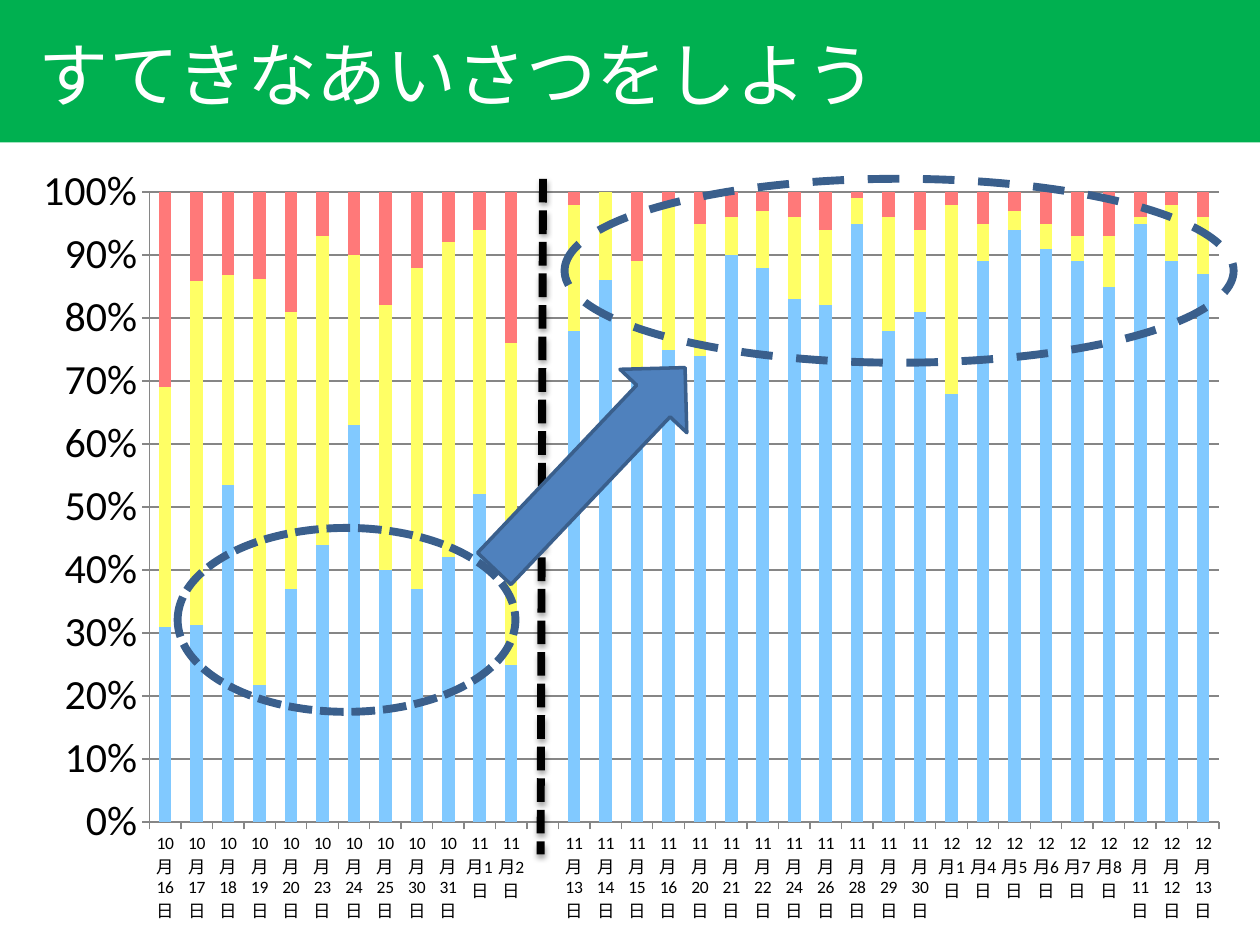
from dataclasses import dataclass
from typing import Optional

from lxml import etree
from pptx import Presentation
from pptx.chart.data import CategoryChartData
from pptx.dml.color import RGBColor
from pptx.enum import chart as ch, dml, shapes, text
from pptx.oxml import parse_xml
from pptx.oxml.ns import nsdecls, qn
from pptx.util import Pt


@dataclass(frozen=True)
class Theme:
    font: str = "Calibri"
    title_size: float = 40
    value_size: float = 24
    date_size: float = 10
    banner: str = "00B050"
    white: str = "FFFFFF"
    black: str = "000000"
    grid: str = "868686"
    outline: str = "3A5F8C"
    arrow: str = "4F81BD"


@dataclass(frozen=True)
class Mark:
    kind: shapes.MSO_SHAPE
    box: tuple[float, float, float, float]
    line_width: float = 0
    dash: Optional[dml.MSO_LINE] = None
    fill: Optional[str] = None
    rotation: float = 0


@dataclass(frozen=True)
class Level:
    name: str
    color: str
    before: list[int]
    after: list[int]


THEME = Theme()
BANNER = Mark(shapes.MSO_SHAPE.RECTANGLE, (0, 0, 720, 81.4), fill=THEME.banner)
TITLE = Mark(shapes.MSO_SHAPE.RECTANGLE, (15.1, 14.4, 689, 55.4), fill=THEME.banner)
MARKS = [
    Mark(shapes.MSO_SHAPE.OVAL, (101.5, 301.7, 193, 105.1), 4.5, dml.MSO_LINE.SQUARE_DOT),
    Mark(shapes.MSO_SHAPE.OVAL, (322.6, 102.2, 382.3, 105.1), 4.5, dml.MSO_LINE.DASH),
    Mark(shapes.MSO_SHAPE.RIGHT_ARROW, (257.8, 241.2, 158.4, 52.6), 2,
         fill=THEME.arrow, rotation=313.5),
]

# Days surveyed before and after the campaign, by month
BEFORE = {10: [16, 17, 18, 19, 20, 23, 24, 25, 30, 31], 11: [1, 2]}
AFTER = {11: [13, 14, 15, 16, 20, 21, 22, 24, 26, 28, 29, 30],
         12: [1, 4, 5, 6, 7, 8, 11, 12, 13]}
LEVELS = [
    Level("Series 1", "81C9FF",
          [31, 31, 53, 22, 37, 44, 63, 40, 37, 42, 52, 25],
          [78, 86, 72, 75, 74, 90, 88, 83, 82, 95, 78, 81, 68, 89, 94, 91, 89, 85, 95, 89, 87]),
    Level("Series 2", "FFFF65",
          [38, 54, 33, 65, 44, 49, 27, 42, 51, 50, 42, 51],
          [20, 14, 17, 23, 21, 6, 9, 13, 12, 4, 18, 13, 30, 6, 3, 4, 4, 8, 1, 9, 9]),
    Level("Series 3", "FF7979",
          [31, 14, 13, 14, 19, 7, 10, 18, 12, 8, 6, 24],
          [2, 0, 11, 2, 5, 4, 3, 4, 6, 1, 4, 6, 2, 5, 3, 5, 7, 7, 4, 2, 4]),
]


def rgb(value: str) -> RGBColor:
    return RGBColor.from_string(value)


def set_fill(fill, color: str) -> None:
    fill.solid()
    fill.fore_color.rgb = rgb(color)


def set_line(line, color: str, width: float, dash=None) -> None:
    set_fill(line.fill, color)
    line.width = Pt(width)
    if dash:
        line.dash_style = dash


def add_mark(parent, mark: Mark):
    sp = parent.add_shape(mark.kind, *map(Pt, mark.box))
    sp.shadow.inherit = False
    sp.rotation = mark.rotation
    if mark.fill:
        set_fill(sp.fill, mark.fill)
    else:
        sp.fill.background()
    if mark.line_width:
        set_line(sp.line, THEME.outline, mark.line_width, mark.dash)
    else:
        sp.line.fill.background()
    return sp


def add_header(s) -> None:
    group = s.shapes.add_group_shape()
    add_mark(group.shapes, BANNER)
    tf = add_mark(group.shapes, TITLE).text_frame
    tf.word_wrap = True
    tf.auto_size = text.MSO_AUTO_SIZE.SHAPE_TO_FIT_TEXT
    tf.vertical_anchor = text.MSO_ANCHOR.TOP
    p = tf.paragraphs[0]
    p.text = "すてきなあいさつをしよう"
    p.alignment = text.PP_ALIGN.LEFT
    p.font.name, p.font.size = THEME.font, Pt(THEME.title_size)
    p.font.color.rgb = rgb(THEME.white)


def date_labels(days: dict[int, list[int]]) -> list[str]:
    return [f"{month}月{day}日" for month, dates in days.items() for day in dates]


def set_plot_area(chart, x: float, y: float, w: float, h: float) -> None:
    area = chart._chartSpace.chart.plotArea
    for old in area.findall(qn("c:layout")):
        area.remove(old)
    settings = [("layoutTarget", "inner"), ("xMode", "edge"), ("yMode", "edge"),
                ("x", x), ("y", y), ("w", w), ("h", h)]
    body = "".join(f'<c:{tag} val="{val}"/>' for tag, val in settings)
    area.insert(0, parse_xml(f'<c:layout {nsdecls("c")}><c:manualLayout>{body}'
                             '</c:manualLayout></c:layout>'))


def add_greeting_chart(s) -> None:
    data = CategoryChartData(number_format="0")
    data.categories = date_labels(BEFORE) + [""] + date_labels(AFTER)
    for level in LEVELS:
        data.add_series(level.name, level.before + [None] + level.after)
    chart = s.shapes.add_chart(ch.XL_CHART_TYPE.COLUMN_STACKED_100, Pt(7.9), Pt(92.2),
                               Pt(704.9), Pt(434.9), data).chart
    chart.has_legend = chart.has_title = False
    chart.font.name, chart.font.size = THEME.font, Pt(THEME.date_size)
    chart.font.color.rgb = rgb(THEME.black)
    set_plot_area(chart, 0.11, 0.041, 0.867, 0.839)

    plot = chart.plots[0]
    plot.gap_width, plot.overlap, plot.vary_by_categories = 150, 100, False
    for series, level in zip(plot.series, LEVELS):
        set_fill(series.format.fill, level.color)

    # Axes
    dates, shares = chart.category_axis, chart.value_axis
    for axis, size in ((dates, THEME.date_size), (shares, THEME.value_size)):
        axis.major_tick_mark = ch.XL_TICK_MARK.OUTSIDE
        axis.tick_labels.font.size = Pt(size)
        set_line(axis.format.line, THEME.grid, 0.75)
    dates._element.find(qn("c:txPr")).find(qn("a:bodyPr")).set("rot", "0")
    shares.minimum_scale, shares.maximum_scale, shares.major_unit = 0, 1, 0.1
    shares.tick_labels.number_format = "0%"
    shares.tick_labels.number_format_is_linked = False
    shares.has_major_gridlines = True
    set_line(shares.major_gridlines.format.line, THEME.grid, 0.75)


def add_divider(s) -> None:
    line = s.shapes.add_connector(shapes.MSO_CONNECTOR.STRAIGHT,
                                  Pt(310.3), Pt(102.2), Pt(308.9), Pt(488.2))
    set_line(line.line, THEME.black, 4.5, dml.MSO_LINE.SQUARE_DOT)
    effects = etree.SubElement(line._element.spPr, qn("a:effectLst"))
    shadow = etree.SubElement(effects, qn("a:outerShdw"), blurRad=str(Pt(3.1)),
                              dist=str(Pt(1.8)), dir="5400000", rotWithShape="0")
    color = etree.SubElement(shadow, qn("a:srgbClr"), val=THEME.black)
    etree.SubElement(color, qn("a:alpha"), val="35000")


def main() -> None:
    prs = Presentation()
    prs.slide_width, prs.slide_height = Pt(720), Pt(540)
    s = prs.slides.add_slide(prs.slide_layouts[6])
    add_header(s)
    add_greeting_chart(s)
    add_divider(s)
    # Ovals around the two periods, and the arrow between them
    for mark in MARKS:
        add_mark(s.shapes, mark)
    prs.save("out.pptx")


if __name__ == "__main__":
    main()
